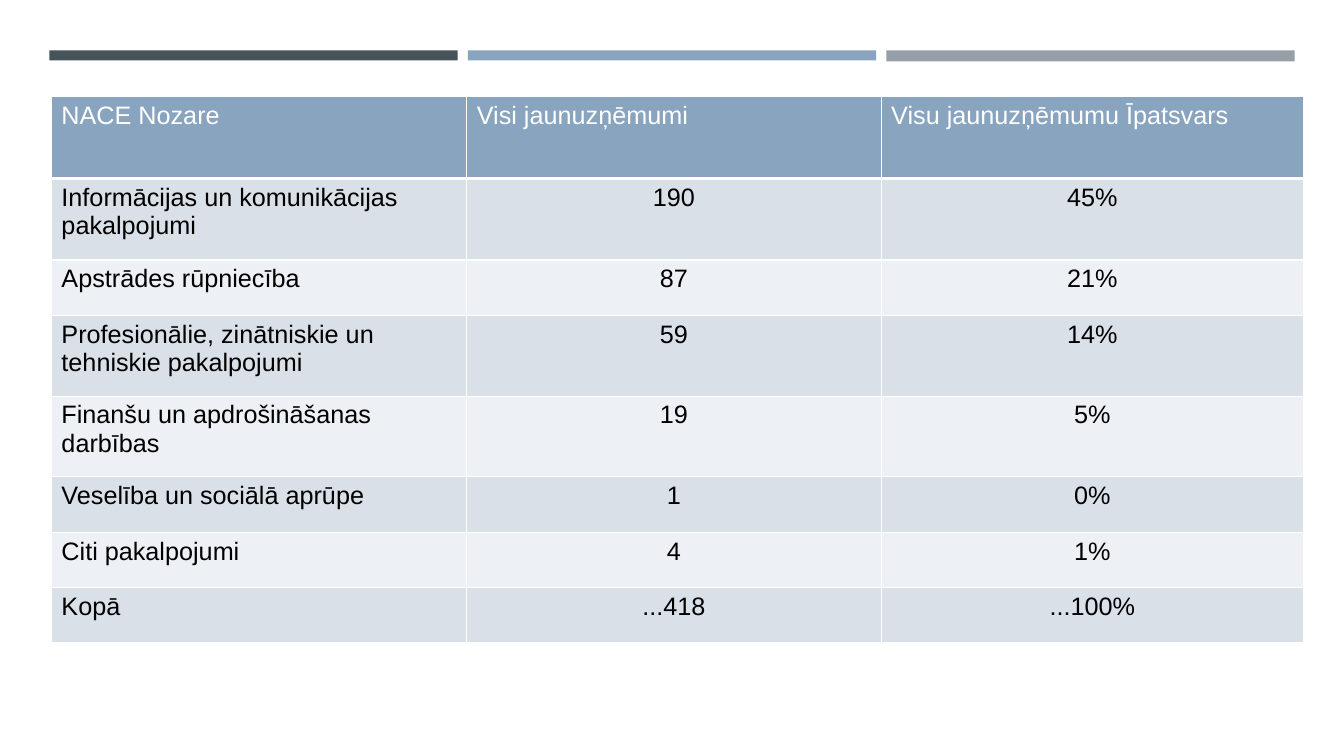
"""Build a slide with a table of startups by NACE sector."""
from lxml import etree
from pptx import Presentation
from pptx.dml.color import RGBColor
from pptx.enum.shapes import MSO_SHAPE
from pptx.enum.text import PP_ALIGN
from pptx.oxml.ns import qn
from pptx.util import Inches, Pt

RECT = MSO_SHAPE.RECTANGLE
LEFT, CENTER = PP_ALIGN.LEFT, PP_ALIGN.CENTER
COLORS = {
    "slate": "465359",
    "blue": "88A4BE",
    "gray": "969FA7",
    "dark": "DAE0E8",
    "light": "EDF0F4",
    "white": "FFFFFF",
    "black": "000000",
}
ROWS = [
    (0.81, "NACE Nozare", "Visi jaunuzņēmumi", "Visu jaunuzņēmumu Īpatsvars"),
    (0.81, "Informācijas un komunikācijas pakalpojumi", "190", "45%"),
    (0.55, "Apstrādes rūpniecība", "87", "21%"),
    (0.8, "Profesionālie, zinātniskie un tehniskie pakalpojumi", "59", "14%"),
    (0.8, "Finanšu un apdrošināšanas darbības", "19", "5%"),
    (0.55, "Veselība un sociālā aprūpe", "1", "0%"),
    (0.55, "Citi pakalpojumi", "4", "1%"),
    (0.55, "Kopā", "...418", "...100%"),
]
WIDTHS = [4.12, 4.11, 4.19]


def paint(fill, name):
    fill.solid()
    fill.fore_color.rgb = RGBColor.from_string(COLORS[name])


def edge(cell, pos, side, width):
    line = etree.Element(qn(f"a:ln{side}"), w=str(Pt(width)))
    fill = etree.SubElement(line, qn("a:solidFill"))
    etree.SubElement(fill, qn("a:srgbClr"), val=COLORS["white"])
    cell._tc.get_or_add_tcPr().insert(pos, line)


deck = Presentation()
deck.slide_width, deck.slide_height = Inches(13.33), Inches(7.5)
slide = deck.slides.add_slide(deck.slide_layouts[6])

for i, (name, height) in enumerate([("slate", 0.1), ("blue", 0.1), ("gray", 0.11)]):
    bar = slide.shapes.add_shape(
        RECT, Inches(0.49 + 4.15 * i), Inches(0.5), Inches(4.05), Inches(height))
    bar.shadow.inherit = False
    paint(bar.fill, name)
    bar.line.fill.background()

table = slide.shapes.add_table(
    len(ROWS), len(WIDTHS), Inches(0.51), Inches(0.96), Inches(12.42), Inches(5.42)).table
for col, width in zip(table.columns, WIDTHS):
    col.width = Inches(width)

for r, (height, *texts) in enumerate(ROWS):
    table.rows[r].height = Inches(height)
    head = r == 0
    band = "blue" if head else "dark" if r % 2 else "light"
    edges = {"L": 1, "R": 1, "T": 3 if r == 1 else 1, "B": 3 if head else 1}
    for c, text in enumerate(texts):
        cell = table.cell(r, c)
        paint(cell.fill, band)
        for pos, (side, width) in enumerate(edges.items()):
            edge(cell, pos, side, width)
        para = cell.text_frame.paragraphs[0]
        para.text = text
        para.alignment = LEFT if head or c == 0 else CENTER
        font = para.runs[0].font
        font.name, font.size, font.bold = "Arial", Pt(18), False
        paint(font.fill, "white" if head else "black")

deck.save("out.pptx")
